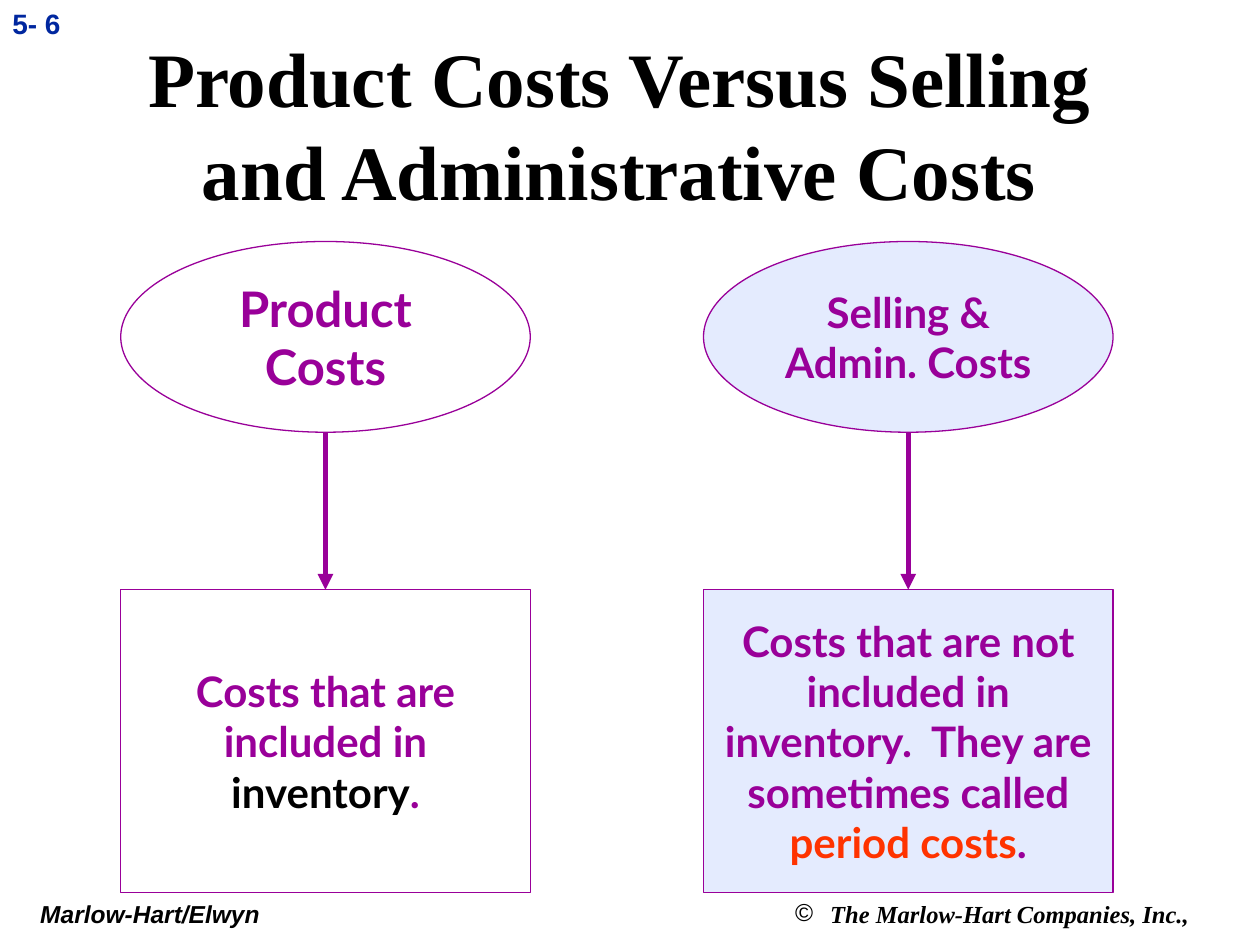
"""Build the slide comparing product costs with selling and administrative costs."""
import pptx
import pptx.dml.color
import pptx.enum.shapes
import pptx.enum.text
import pptx.oxml.ns
import pptx.util
from lxml import etree

Pt = pptx.util.Pt
RGB = pptx.dml.color.RGBColor.from_string
MSO = pptx.enum.shapes.MSO_SHAPE
ALIGN = pptx.enum.text.PP_ALIGN
MIDDLE = pptx.enum.text.MSO_ANCHOR.MIDDLE
qn = pptx.oxml.ns.qn

COLORS = {"black": "000000", "navy": "00279F", "purple": "990099",
          "red": "FF3300", "white": "FFFFFF", "pale": "E4EBFE"}


def write(sp, runs, size, font, align=ALIGN.LEFT, italic=False):
    tf = sp.text_frame
    tf.word_wrap = True
    p = tf.paragraphs[0]
    p.alignment = align
    for text, color in runs:
        r = p.add_run()
        r.text = text
        r.font.size, r.font.name = Pt(size), font
        r.font.bold, r.font.italic = True, italic
        r.font.color.rgb = RGB(COLORS[color])
    return p


prs = pptx.Presentation()
prs.slide_width, prs.slide_height = Pt(720), Pt(540)
s = prs.slides.add_slide(prs.slide_layouts[5])

title = s.shapes.title
title.left, title.top, title.width, title.height = Pt(42), Pt(27), Pt(624), Pt(87)
title.text_frame.vertical_anchor = MIDDLE
write(title, [("Product Costs Versus Selling and Administrative Costs", "black")],
      44, "Times New Roman", ALIGN.CENTER)

number = s.shapes.add_textbox(Pt(0), Pt(0), Pt(60), Pt(36))
write(number, [("5- 6", "navy")], 16, "Arial")

imprint = s.shapes.add_textbox(Pt(0), Pt(510), Pt(180), Pt(24))
imprint.text_frame.margin_left = Pt(23)
write(imprint, [("Marlow-Hart/Elwyn", "black")], 14, "Arial", italic=True)

rights = s.shapes.add_textbox(Pt(420), Pt(510), Pt(294), Pt(24))
p = write(rights, [("The Marlow-Hart Companies, Inc.,", "black")],
          14, "Times New Roman", ALIGN.CENTER, italic=True)
pPr = p._p.get_or_add_pPr()
pPr.set("marL", str(Pt(20)))
pPr.set("indent", str(-Pt(20)))
etree.SubElement(pPr, qn("a:buFont"), typeface="Arial")
etree.SubElement(pPr, qn("a:buChar"), char="©")

columns = [
    (69, "white", "Product Costs", 28,
     [("Costs that are included in ", "purple"), ("inventory", "black"), (".", "purple")]),
    (402, "pale", "Selling & Admin. Costs", 24,
     [("Costs that are not included in inventory.  They are sometimes called ", "purple"),
      ("period costs", "red"), (".", "purple")]),
]
width, top, bottom, box_top, box_height = 234, 138, 247, 337, 173

for left, fill, heading, size, definition in columns:
    parts = [(MSO.OVAL, top, bottom - top, [(heading, "purple")], size),
             (MSO.RECTANGLE, box_top, box_height, definition, 24)]
    for kind, y, height, runs, points in parts:
        sp = s.shapes.add_shape(kind, Pt(left), Pt(y), Pt(width), Pt(height))
        sp.shadow.inherit = False
        sp.fill.solid()
        sp.fill.fore_color.rgb = RGB(COLORS[fill])
        sp.line.color.rgb = RGB(COLORS["purple"])
        sp.line.width = Pt(0.75)
        sp.text_frame.vertical_anchor = MIDDLE
        write(sp, runs, points, "Lato", ALIGN.CENTER)

    center = Pt(left + width / 2)
    arrow = s.shapes.add_connector(pptx.enum.shapes.MSO_CONNECTOR.STRAIGHT,
                                   center, Pt(bottom), center, Pt(box_top))
    arrow.end_connect(sp, 0)
    arrow.line.color.rgb = RGB(COLORS["purple"])
    arrow.line.width = Pt(3)
    spPr = arrow._element.spPr
    etree.SubElement(spPr.find(qn("a:ln")), qn("a:tailEnd"), type="triangle")
    etree.SubElement(spPr, qn("a:effectLst"))

prs.save("out.pptx")
